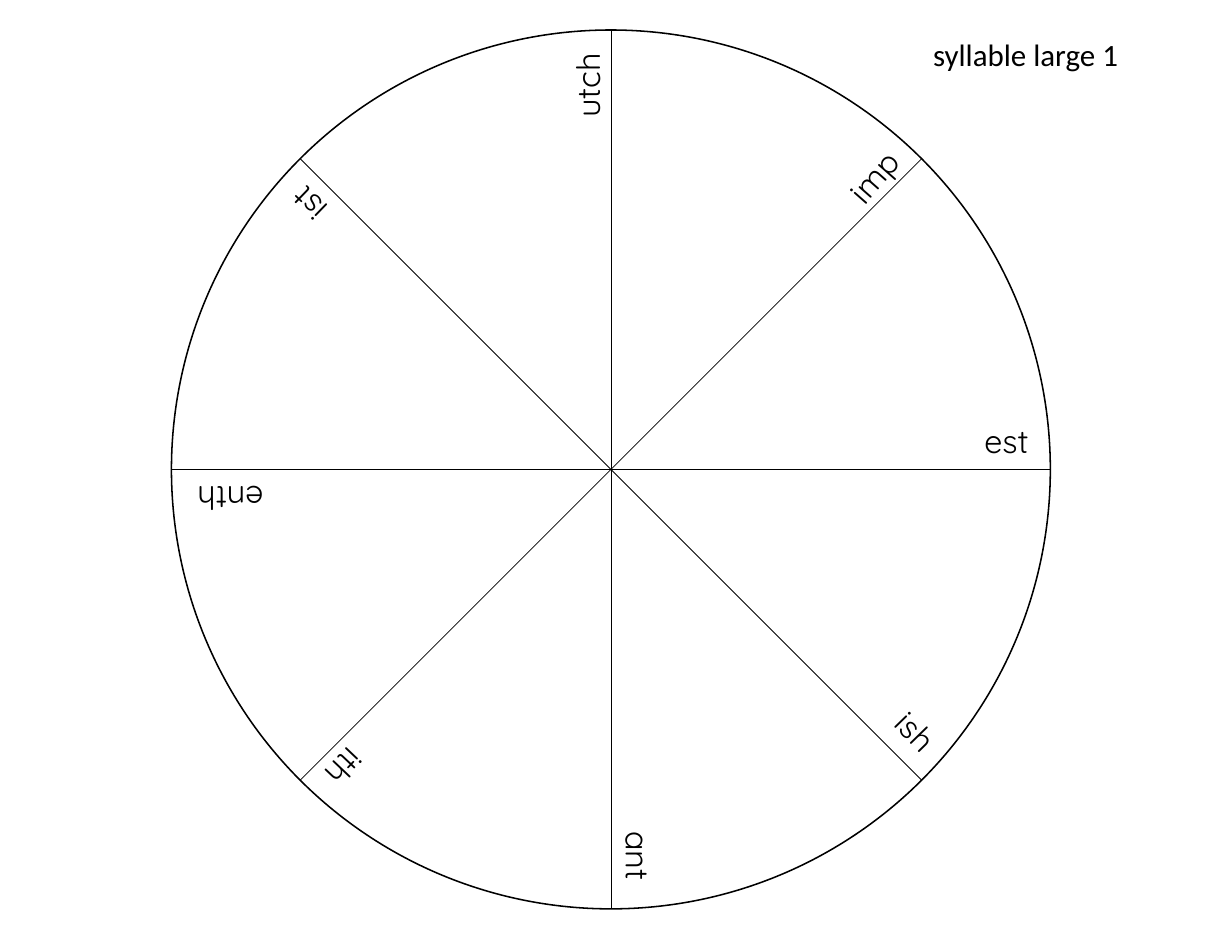
from dataclasses import dataclass
from math import cos, radians, sin

from lxml import etree
from pptx import Presentation
from pptx.dml.color import RGBColor
from pptx.enum.shapes import MSO_CONNECTOR, MSO_SHAPE
from pptx.enum.text import MSO_ANCHOR, MSO_AUTO_SIZE, PP_ALIGN
from pptx.oxml.ns import qn
from pptx.util import Pt

STRAIGHT = MSO_CONNECTOR.STRAIGHT
OVAL = MSO_SHAPE.OVAL
TOP = MSO_ANCHOR.TOP
LEFT = PP_ALIGN.LEFT
GROW = MSO_AUTO_SIZE.SHAPE_TO_FIT_TEXT

TITLE_ONLY = 5
BLACK = "000000"
CENTER_X, CENTER_Y, RADIUS = 392.75, 301.8, 282.5
SPOKE_ANGLES = (90, 0, 45, 135)
LABEL_HEIGHT = 32.4


@dataclass
class Syllable:
    text: str
    left: float
    top: float
    width: float
    rotation: float


SYLLABLES = [
    Syllable("est", 625.7, 267.1, 73.4, 0),
    Syllable("ish", 560.2, 473.8, 95.8, 45.7),
    Syllable("ant", 362.9, 558.7, 95, 90),
    Syllable("ith", 154.8, 497.5, 94.3, 133.5),
    Syllable("enth", 59, 304.6, 117.4, 180),
    Syllable("ist", 141.1, 99.4, 81.4, 224),
    Syllable("utch", 321.1, 10.1, 113, 270),
    Syllable("imp", 528.5, 79.9, 96.5, 311.3),
]


def color(value: str) -> RGBColor:
    return RGBColor.from_string(value)


def write(shape, text: str, font_name: str, size: float) -> None:
    frame = shape.text_frame
    frame.text = text
    frame.word_wrap = True
    frame.auto_size = GROW
    frame.vertical_anchor = TOP
    paragraph = frame.paragraphs[0]
    paragraph.alignment = LEFT
    paragraph.line_spacing = 1.0
    font = paragraph.runs[0].font
    font.name, font.size = font_name, Pt(size)
    font.color.rgb = color(BLACK)


def place(shape, left: float, top: float, width: float, height: float) -> None:
    shape.left, shape.top = Pt(left), Pt(top)
    shape.width, shape.height = Pt(width), Pt(height)


def draw_rim(slide) -> None:
    rim = slide.shapes.add_shape(
        OVAL, Pt(CENTER_X - RADIUS), Pt(CENTER_Y - RADIUS),
        Pt(2 * RADIUS), Pt(2 * RADIUS))
    rim.shadow.inherit = False
    rim.fill.background()
    rim.line.color.rgb = color(BLACK)
    rim.line.width = Pt(1)


def draw_spoke(slide, angle: float) -> None:
    dx, dy = RADIUS * cos(radians(angle)), RADIUS * sin(radians(angle))
    spoke = slide.shapes.add_connector(
        STRAIGHT, Pt(CENTER_X - dx), Pt(CENTER_Y - dy),
        Pt(CENTER_X + dx), Pt(CENTER_Y + dy))
    spoke.line.color.rgb = color(BLACK)
    spoke.line.width = Pt(0.5)
    etree.SubElement(spoke._element.spPr, qn("a:effectLst"))


def draw_syllable(slide, syllable: Syllable) -> None:
    label = slide.shapes.add_textbox(
        Pt(syllable.left), Pt(syllable.top),
        Pt(syllable.width), Pt(LABEL_HEIGHT))
    label.rotation = syllable.rotation
    write(label, syllable.text, "Quicksand", 20.9)


def main() -> None:
    deck = Presentation()
    deck.slide_width, deck.slide_height = Pt(792), Pt(612)
    slide = deck.slides.add_slide(deck.slide_layouts[TITLE_ONLY])

    # Wheel title
    title = slide.shapes.title
    place(title, 592.6, 19.4, 164.2, 31.7)
    write(title, "syllable large 1", "Calibri", 19.9)

    # Wheel with eight sectors
    draw_rim(slide)
    for angle in SPOKE_ANGLES:
        draw_spoke(slide, angle)

    # Syllables along the spokes
    for syllable in SYLLABLES:
        draw_syllable(slide, syllable)

    deck.save("out.pptx")


if __name__ == "__main__":
    main()
